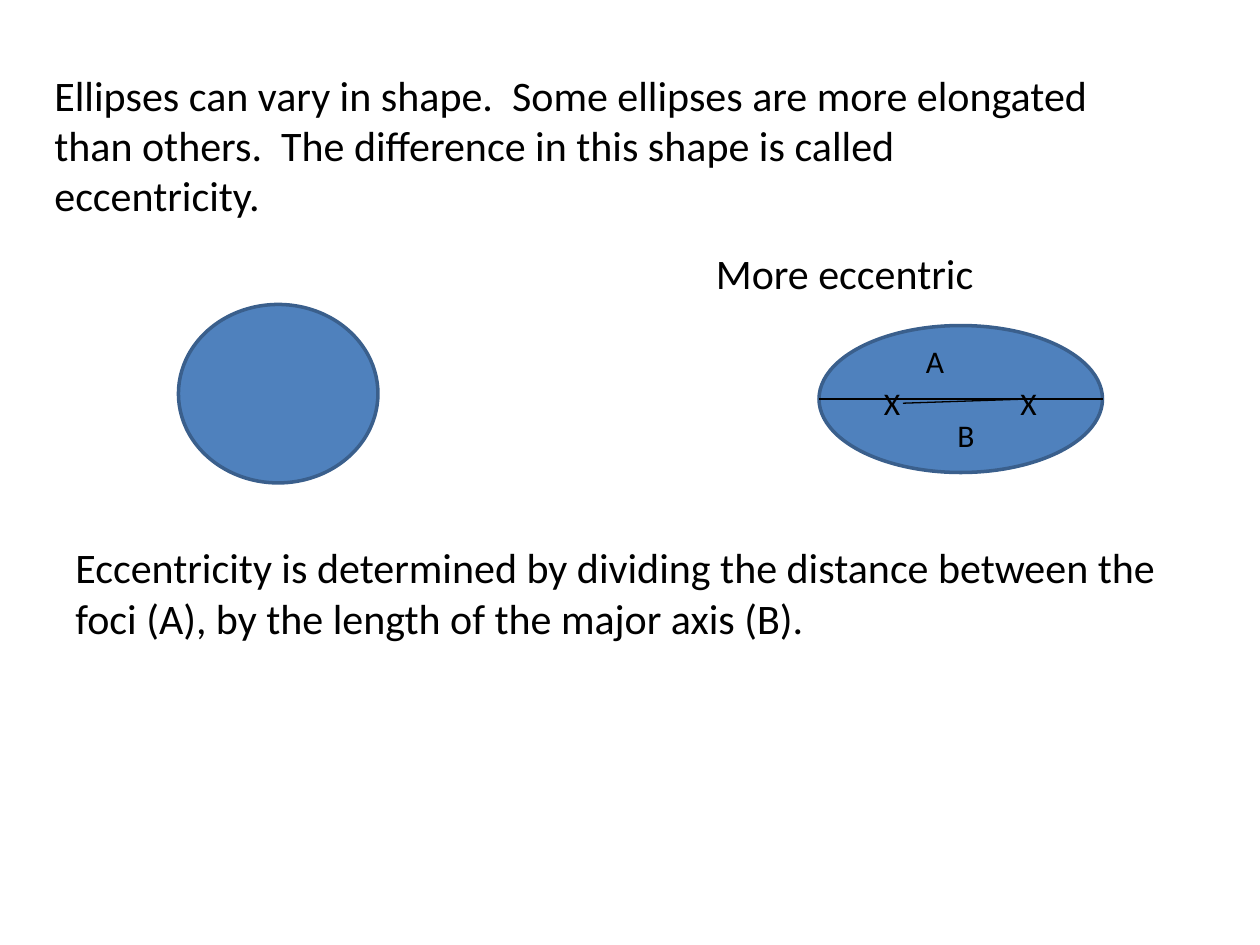
"""Builds a slide on the eccentricity of ellipses, laid out on a grid of 120 columns by 90 rows."""
import pptx
import pptx.dml.color
import pptx.enum.shapes
import pptx.enum.text
import pptx.util
import lxml.etree

BLACK = pptx.dml.color.RGBColor(0x00, 0x00, 0x00)
BLUE = pptx.dml.color.RGBColor(0x4F, 0x81, 0xBD)
DARK_BLUE = pptx.dml.color.RGBColor(0x3A, 0x5F, 0x8C)

CELL = pptx.util.Inches(10) // 120
BODY_SIZE, LABEL_SIZE = 24, 18
DRAWING_NS = "http://schemas.openxmlformats.org/drawingml/2006/main"


def grid(*cells):
    return [round(cell * CELL) for cell in cells]


def apply_format(target, values):
    for name, value in values.items():
        setattr(target, name, value)


def add_text(slide, area, wording, size):
    box = slide.shapes.add_textbox(*grid(*area))
    apply_format(box.text_frame, {
        "word_wrap": True,
        "auto_size": pptx.enum.text.MSO_AUTO_SIZE.SHAPE_TO_FIT_TEXT,
    })
    run = box.text_frame.paragraphs[0].add_run()
    run.text = wording
    apply_format(run.font, {"name": "Calibri", "size": pptx.util.Pt(size)})
    run.font.color.rgb = BLACK


def add_ellipse(slide, area):
    ellipse = slide.shapes.add_shape(pptx.enum.shapes.MSO_SHAPE.OVAL, *grid(*area))
    ellipse.shadow.inherit = False
    ellipse.fill.solid()
    ellipse.fill.fore_color.rgb = BLUE
    ellipse.line.color.rgb = DARK_BLUE
    ellipse.line.width = pptx.util.Pt(2)


def add_line(slide, ends):
    line = slide.shapes.add_connector(pptx.enum.shapes.MSO_CONNECTOR.STRAIGHT, *grid(*ends))
    line.line.color.rgb = BLACK
    line.line.width = pptx.util.Pt(0.75)
    lxml.etree.SubElement(line._element.spPr, f"{{{DRAWING_NS}}}effectLst")


def main():
    deck = pptx.Presentation()
    apply_format(deck, {"slide_width": 120 * CELL, "slide_height": 90 * CELL})
    slide = deck.slides.add_slide(deck.slide_layouts[6])

    add_text(slide, (4, 6, 101, 15.75),
             "Ellipses can vary in shape.  Some ellipses are more elongated than others.  "
             "The difference in this shape is called eccentricity.", BODY_SIZE)

    round_ellipse = (17, 29, 19, 17)
    long_ellipse = (78, 31, 27, 14)
    for area in (round_ellipse, long_ellipse):
        add_ellipse(slide, area)

    add_text(slide, (67, 23, 30, 6), "More eccentric", BODY_SIZE)
    add_text(slide, (6, 51, 106, 10.9),
             "Eccentricity is determined by dividing the distance between the foci (A), "
             "by the length of the major axis (B).", BODY_SIZE)

    for left, top, width, label in (
        (83, 36, 3, "X"),
        (96, 36, 5, "X"),
        (87, 32, 6, "A"),
        (90, 39, 5, "B"),
    ):
        add_text(slide, (left, top, width, 4.8), label, LABEL_SIZE)

    left, top, width, height = long_ellipse
    axis_row = top + height / 2
    foci_distance = (86, 38.4, 98, axis_row)
    major_axis = (left, axis_row, left + width, axis_row)
    for ends in (foci_distance, major_axis):
        add_line(slide, ends)

    deck.save("out.pptx")


if __name__ == "__main__":
    main()
